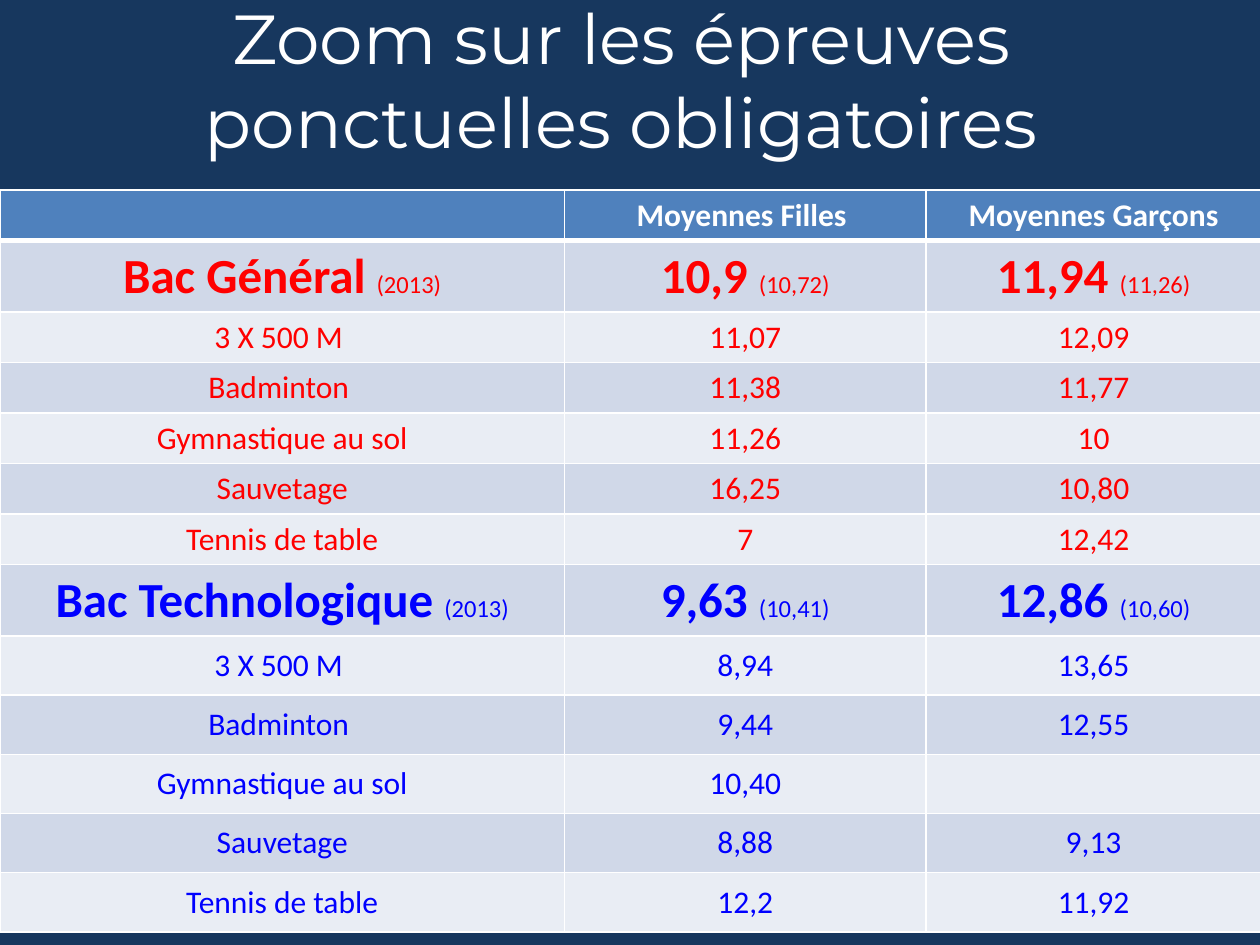
import dataclasses

import lxml.etree
import pptx
import pptx.dml.color
import pptx.enum.text
import pptx.oxml.ns
import pptx.util
from pptx.util import Inches


@dataclasses.dataclass(frozen=True)
class Theme:
    background: str = "17375E"
    white: str = "FFFFFF"
    header: str = "4F81BD"
    bands: tuple = ("D0D8E8", "E9EDF4")
    general: str = "FF0000"
    technological: str = "0000FF"
    title_font: str = "Montserrat"
    body_font: str = "Calibri"
    title_size: float = 39.6
    average_size: int = 28
    body_size: int = 18
    note_size: int = 14


theme = Theme()


def add_text(paragraph, text, *, size=theme.body_size, color=theme.white,
             font=theme.body_font, bold=False):
    paragraph.alignment = pptx.enum.text.PP_ALIGN.CENTER
    run = paragraph.add_run()
    run.text = text
    run.font.name = font
    run.font.size = pptx.util.Pt(size)
    run.font.bold = bold
    run.font.color.rgb = pptx.dml.color.RGBColor.from_string(color)


def set_border(cell, side, width):
    properties = cell._tc.get_or_add_tcPr()
    line = lxml.etree.SubElement(properties, pptx.oxml.ns.qn(f"a:ln{side}"),
                                 w=str(pptx.util.Pt(width)))
    fill = lxml.etree.SubElement(line, pptx.oxml.ns.qn("a:solidFill"))
    lxml.etree.SubElement(fill, pptx.oxml.ns.qn("a:srgbClr"), val=theme.white)


# Slide
presentation = pptx.Presentation()
presentation.slide_width = Inches(10)
presentation.slide_height = Inches(7.5)
slide = presentation.slides.add_slide(presentation.slide_layouts[6])
slide.background.fill.solid()
slide.background.fill.fore_color.rgb = pptx.dml.color.RGBColor.from_string(theme.background)

# Title
title = slide.shapes.add_textbox(Inches(0.43), Inches(0), Inches(9), Inches(1.25))
title.text_frame.word_wrap = True
title.text_frame.vertical_anchor = pptx.enum.text.MSO_ANCHOR.MIDDLE
add_text(title.text_frame.paragraphs[0], "Zoom sur les épreuves ponctuelles obligatoires",
         size=theme.title_size, font=theme.title_font)

# Results: headings, then averages with the 2013 figures and one row per sport
headings = ("", "Moyennes Filles ", "Moyennes Garçons")
sports = ("3 X 500 M ", "Badminton ", "Gymnastique au sol", "Sauvetage", "Tennis de table")
sections = [
    (theme.general, 0.38,
     (("Bac Général ", "(2013)"), ("10,9 ", "(10,72)"), ("11,94 ", "(11,26)")),
     ("11,07", "11,38", "11,26", "16,25", "7"),
     ("12,09", "11,77", "10", "10,80", "12,42")),
    (theme.technological, 0.47,
     (("Bac Technologique ", "(2013)"), ("9,63 ", "(10,41)"), ("12,86 ", "(10,60)")),
     ("8,94", "9,44", "10,40", "8,88", "12,2"),
     ("13,65", "12,55", "", "9,13", "11,92")),
]

# Each row: height, colour, cells; an average cell is a pair of texts
rows = [(0.38, theme.white, headings)]
for color, height, averages, girls, boys in sections:
    rows.append((0.54, color, averages))
    rows.extend((height, color, values) for values in zip(sports, girls, boys))

# Table
column_widths = (4.48, 2.87, 2.66)
table = slide.shapes.add_table(len(rows), len(column_widths), Inches(0), Inches(1.51),
                               Inches(10), Inches(5.87)).table
for column, width in zip(table.columns, column_widths):
    column.width = Inches(width)

for row_index, (height, color, values) in enumerate(rows):
    table.rows[row_index].height = Inches(height)
    is_header = row_index == 0
    fill_color = theme.header if is_header else theme.bands[(row_index - 1) % 2]
    for column_index, value in enumerate(values):
        cell = table.cell(row_index, column_index)
        for side in "LRTB":
            # The rule under the header is shared by the first two rows
            thick = (side == "B" and is_header) or (side == "T" and row_index == 1)
            set_border(cell, side, 3 if thick else 1)
        cell.fill.solid()
        cell.fill.fore_color.rgb = pptx.dml.color.RGBColor.from_string(fill_color)
        cell.vertical_anchor = pptx.enum.text.MSO_ANCHOR.MIDDLE
        paragraph = cell.text_frame.paragraphs[0]
        if isinstance(value, tuple):
            average, note = value
            add_text(paragraph, average, size=theme.average_size, color=color, bold=True)
            add_text(paragraph, note, size=theme.note_size, color=color)
        elif value:
            add_text(paragraph, value, color=color, bold=is_header)

presentation.save("out.pptx")
